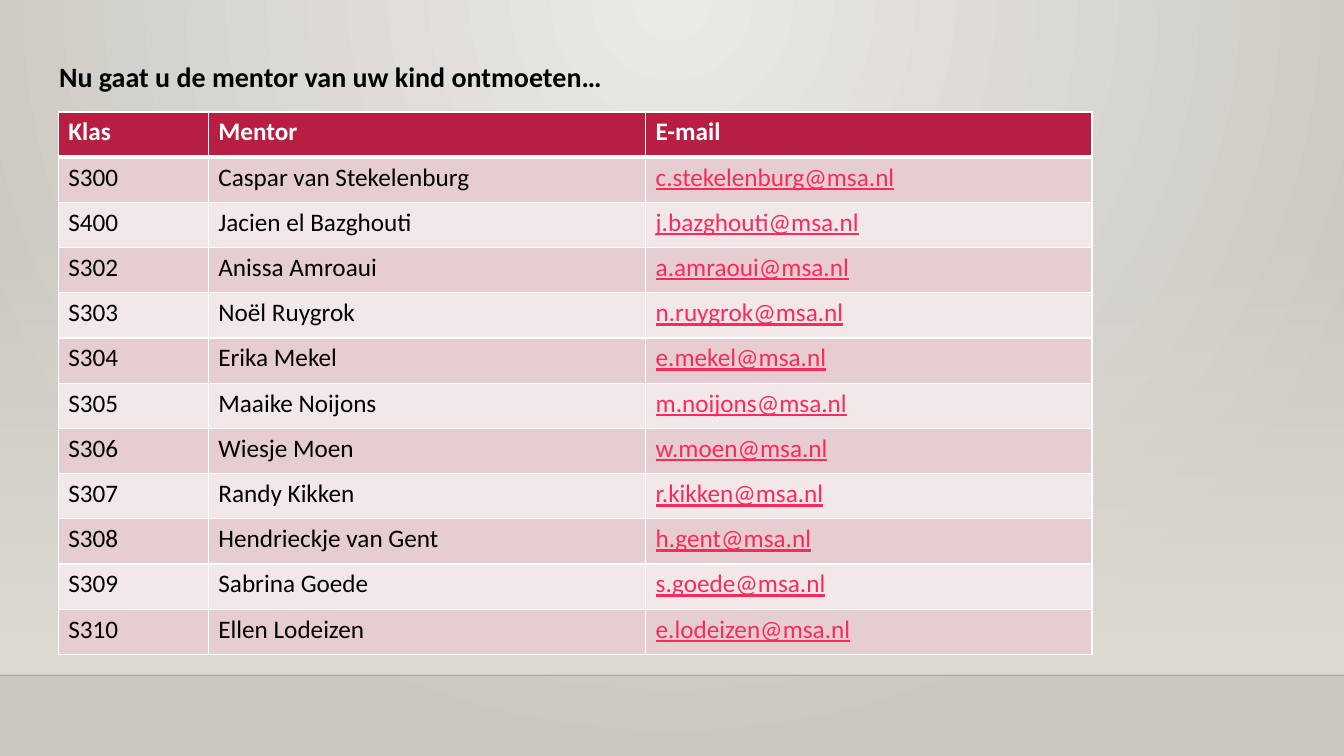
from lxml.etree import SubElement
from pptx import Presentation
from pptx.dml.color import RGBColor
from pptx.enum.shapes import MSO_CONNECTOR, MSO_SHAPE
from pptx.oxml import parse_xml
from pptx.oxml.ns import nsdecls, qn
from pptx.util import Cm, Pt

SLIDE_WIDTH = Cm(33.87)
SLIDE_HEIGHT = Cm(19.05)
FLOOR_TOP = Cm(17.02)
ROW_HEIGHT = Cm(1.14)
COLUMN_WIDTHS = [Cm(3.78), Cm(11.02), Cm(11.25)]
FONT = "Calibri"
BLACK = "000000"
WHITE = "FFFFFF"
CRIMSON = "B71E42"
LINK_PINK = "FA2B5C"
BANDS = ["E6CDCF", "F3E8E9"]

HEADINGS = ["Klas", "Mentor", "E-mail"]
MENTORS = [
    ("S300", "Caspar van Stekelenburg", "c.stekelenburg@msa.nl"),
    ("S400", "Jacien el Bazghouti", "j.bazghouti@msa.nl"),
    ("S302", "Anissa Amroaui", "a.amraoui@msa.nl"),
    ("S303", "Noël Ruygrok", "n.ruygrok@msa.nl"),
    ("S304", "Erika Mekel", "e.mekel@msa.nl"),
    ("S305", "Maaike Noijons", "m.noijons@msa.nl"),
    ("S306", "Wiesje Moen", "w.moen@msa.nl"),
    ("S307", "Randy Kikken", "r.kikken@msa.nl"),
    ("S308", "Hendrieckje van Gent", "h.gent@msa.nl"),
    ("S309", "Sabrina Goede", "s.goede@msa.nl"),
    ("S310", "Ellen Lodeizen", "e.lodeizen@msa.nl"),
]


def set_colour(colour_format, hex_value):
    colour_format.rgb = RGBColor.from_string(hex_value)


def set_opacity(element, percent):
    colour = next(element.iter(qn("a:srgbClr")))
    SubElement(colour, qn("a:alpha"), val=str(percent * 1000))


def set_gradient(fill, start, end):
    fill.gradient()
    for stop, hex_value in zip(fill.gradient_stops, (start, end)):
        set_colour(stop.color, hex_value)
    fill.gradient_stops[0].position = 0
    fill.gradient_stops[1].position = 1


def write_text(paragraph, text, size, hex_value, bold=False, underline=False):
    paragraph.text = text
    font = paragraph.font
    font.name = FONT
    font.size = Pt(size)
    font.bold = bold
    font.underline = underline
    set_colour(font.color, hex_value)


def paint_background(slide):
    set_gradient(slide.background.fill, "ECEAE7", "CAC7C1")
    gradient = next(slide.element.iter(qn("a:gradFill")))
    linear = gradient.find(qn("a:lin"))
    radial = parse_xml(
        f'<a:path {nsdecls("a")} path="circle">'
        '<a:fillToRect l="43000" t="0" r="43000" b="100000"/></a:path>'
    )
    gradient.replace(linear, radial)


def add_wall(slide):
    top = Cm(5.61)
    wall = slide.shapes.add_shape(
        MSO_SHAPE.RECTANGLE, 0, top, SLIDE_WIDTH, FLOOR_TOP - top
    )
    wall.shadow.inherit = False
    wall.line.fill.background()
    set_gradient(wall.fill, "DFDBD5", "DFDBD5")
    wall.fill.gradient_angle = 270
    set_opacity(wall.element.spPr, 0)


def add_floor_line(slide):
    floor = slide.shapes.add_connector(
        MSO_CONNECTOR.STRAIGHT, 0, FLOOR_TOP, SLIDE_WIDTH, FLOOR_TOP
    )
    floor.line.width = Pt(1)
    set_colour(floor.line.color, "000001")
    properties = floor.element.spPr
    set_opacity(properties, 20)
    SubElement(properties, qn("a:effectLst"))


def add_title(slide, text):
    title = slide.shapes.add_textbox(Cm(1.24), Cm(1.37), Cm(29.24), Cm(3.51))
    title.text_frame.word_wrap = True
    write_text(title.text_frame.paragraphs[0], text, 20, BLACK, bold=True)


def set_borders(cell, top, bottom):
    widths = {"lnL": 1, "lnR": 1, "lnT": top, "lnB": bottom}
    properties = cell._tc.get_or_add_tcPr()
    for position, (side, width) in enumerate(widths.items()):
        border = parse_xml(
            f'<a:{side} {nsdecls("a")} w="{Pt(width)}"><a:solidFill>'
            f'<a:srgbClr val="{WHITE}"/></a:solidFill></a:{side}>'
        )
        properties.insert(position, border)


def fill_cell(cell, text, background, hex_value, bold=False, underline=False):
    write_text(cell.text_frame.paragraphs[0], text, 18, hex_value, bold, underline)
    cell.fill.solid()
    set_colour(cell.fill.fore_color, background)


def add_mentor_table(slide):
    row_count = len(MENTORS) + 1
    mentors = slide.shapes.add_table(
        row_count, len(HEADINGS), Cm(1.47), Cm(2.82),
        sum(COLUMN_WIDTHS), ROW_HEIGHT * row_count,
    ).table
    for column, width in zip(mentors.columns, COLUMN_WIDTHS):
        column.width = width
    for row in mentors.rows:
        row.height = ROW_HEIGHT
    for column, heading in enumerate(HEADINGS):
        cell = mentors.cell(0, column)
        fill_cell(cell, heading, CRIMSON, WHITE, bold=True)
        set_borders(cell, 1, 3)
    for row, entry in enumerate(MENTORS, start=1):
        for column, text in enumerate(entry):
            cell = mentors.cell(row, column)
            is_email = HEADINGS[column] == "E-mail"
            fill_cell(cell, text, BANDS[(row - 1) % 2],
                      LINK_PINK if is_email else BLACK, underline=is_email)
            set_borders(cell, 3 if row == 1 else 1, 1)


def main():
    presentation = Presentation()
    presentation.slide_width = SLIDE_WIDTH
    presentation.slide_height = SLIDE_HEIGHT
    slide = presentation.slides.add_slide(presentation.slide_layouts[6])
    paint_background(slide)
    add_wall(slide)
    add_floor_line(slide)
    add_title(slide, "Nu gaat u de mentor van uw kind ontmoeten…")
    add_mentor_table(slide)
    presentation.save("out.pptx")


if __name__ == "__main__":
    main()
